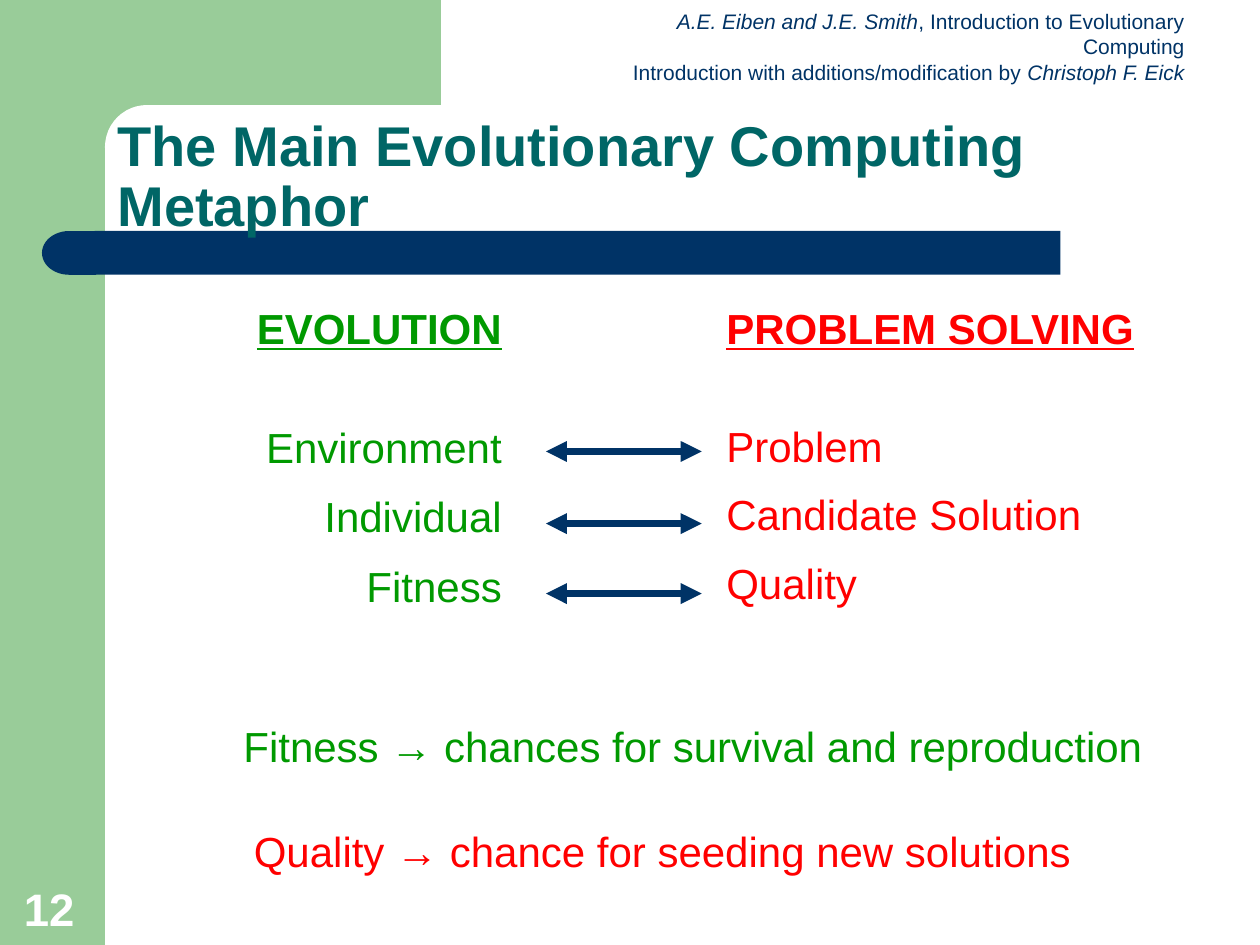
from lxml import etree
from pptx import Presentation
from pptx.dml.color import RGBColor
from pptx.enum import shapes, text
from pptx.oxml import ns
from pptx.util import Pt

SAGE, NAVY, TEAL = "99CC99", "003366", "006666"
GREEN, RED, WHITE = "009900", "FF0000", "FFFFFF"
SHAPE = shapes.MSO_SHAPE
ALIGN = text.PP_ALIGN
ANCHOR = text.MSO_ANCHOR


def color(hex_string):
    return RGBColor.from_string(hex_string)


def add_block(slide, kind, left, top, width, height, fill):
    block = slide.shapes.add_shape(kind, Pt(left), Pt(top), Pt(width), Pt(height))
    block.shadow.inherit = False
    block.fill.solid()
    block.fill.fore_color.rgb = color(fill)
    block.line.fill.background()
    return block


def add_frame(slide, left, top, width, height, anchor=ANCHOR.TOP, wrap=True):
    box = slide.shapes.add_textbox(Pt(left), Pt(top), Pt(width), Pt(height))
    frame = box.text_frame
    frame.word_wrap = wrap
    frame.vertical_anchor = anchor
    return frame


def style(paragraph, size, hex_string, bold=False, align=ALIGN.LEFT):
    paragraph.alignment = align
    font = paragraph.font
    font.name, font.size, font.bold = "Arial", Pt(size), bold
    font.color.rgb = color(hex_string)


def add_line_of_text(frame, words, size, hex_string, **options):
    paragraph = frame.paragraphs[0]
    paragraph.text = words
    style(paragraph, size, hex_string, **options)
    return paragraph


def add_credits(slide, lines):
    frame = add_frame(slide, 346, 1.5, 338, 50)
    for index, runs in enumerate(lines):
        paragraph = frame.add_paragraph() if index else frame.paragraphs[0]
        style(paragraph, 12, NAVY, align=ALIGN.RIGHT)
        for words, italic in runs:
            run = paragraph.add_run()
            run.text = words
            run.font.italic = italic


def add_column(slide, left, width, heading, terms, hex_string, align, first_gap, pitch=None):
    frame = add_frame(slide, left, 169.2, width, 230)
    title = add_line_of_text(frame, heading, 24, hex_string, bold=True, align=align)
    title.font.underline = True
    title.space_before = Pt(3)
    for index, term in enumerate(terms):
        paragraph = frame.add_paragraph()
        paragraph.text = term
        style(paragraph, 24, hex_string, align=align)
        paragraph.space_before = Pt(5.5 if index else first_gap)
        paragraph.space_after = Pt(5.5 if pitch is None else 4.8)
        if pitch:
            paragraph.line_spacing = Pt(pitch)


def add_double_arrow(slide, start, end, y):
    arrow = slide.shapes.add_connector(
        shapes.MSO_CONNECTOR.STRAIGHT, Pt(start), Pt(y), Pt(end), Pt(y))
    arrow.line.color.rgb = color(NAVY)
    arrow.line.width = Pt(4)
    outline = arrow.line._get_or_add_ln()
    for tip in ("a:headEnd", "a:tailEnd"):
        etree.SubElement(outline, ns.qn(tip), type="triangle")
    etree.SubElement(arrow._element.spPr, ns.qn("a:effectLst"))


def main():
    deck = Presentation()
    deck.slide_width, deck.slide_height = Pt(720), Pt(540)
    slide = deck.slides.add_slide(deck.slide_layouts[6])

    # Green side and top bands with the rounded white corner
    add_block(slide, SHAPE.RECTANGLE, 0, 0, 60, 540, SAGE)
    add_block(slide, SHAPE.RECTANGLE, 54, 0, 198, 84, SAGE)
    corner = add_block(slide, SHAPE.ROUNDED_RECTANGLE, 60, 60, 402, 48, WHITE)
    corner.adjustments[0] = 0.5

    # Navy bar with its rounded left end
    add_block(slide, SHAPE.RECTANGLE, 54, 132, 552, 25, NAVY)
    bar_end = add_block(slide, SHAPE.FLOWCHART_DELAY, 24, 132, 31, 25, NAVY)
    bar_end.rotation = 180

    # Credits and title
    add_credits(slide, [
        [("A.E. Eiben and J.E. Smith", True),
         (", Introduction to Evolutionary Computing", False)],
        [("Introduction with additions/modification by ", False),
         ("Christoph F. Eick", True)],
    ])
    title_frame = add_frame(slide, 60, 72, 624, 60, ANCHOR.MIDDLE)
    title = add_line_of_text(title_frame, "The Main Evolutionary Computing Metaphor",
                             32, TEAL, bold=True)
    title.line_spacing = 0.9

    # The two sides of the metaphor, joined by arrows
    add_column(slide, 103, 190.8, "EVOLUTION", ["Environment", "Individual", "Fitness"],
               GREEN, ALIGN.RIGHT, 39.2)
    add_column(slide, 408, 252, "PROBLEM SOLVING",
               ["Problem", "Candidate Solution", "Quality"],
               RED, ALIGN.LEFT, 38.4, pitch=29)
    for y in (258, 299.2, 339.2):
        add_double_arrow(slide, 312, 401, y)

    # Consequences
    for left, top, width, words, hex_string in (
        (138, 468, 482, "Quality → chance for seeding new solutions", RED),
        (132, 408, 528, "Fitness → chances for survival and reproduction", GREEN),
    ):
        frame = add_frame(slide, left, top, width, 36, wrap=False)
        add_line_of_text(frame, words, 24, hex_string)

    # Slide number
    number = add_frame(slide, 6.5, 500, 46, 38, ANCHOR.BOTTOM)
    add_line_of_text(number, "12", 26, WHITE, bold=True)

    deck.save("out.pptx")


if __name__ == "__main__":
    main()
